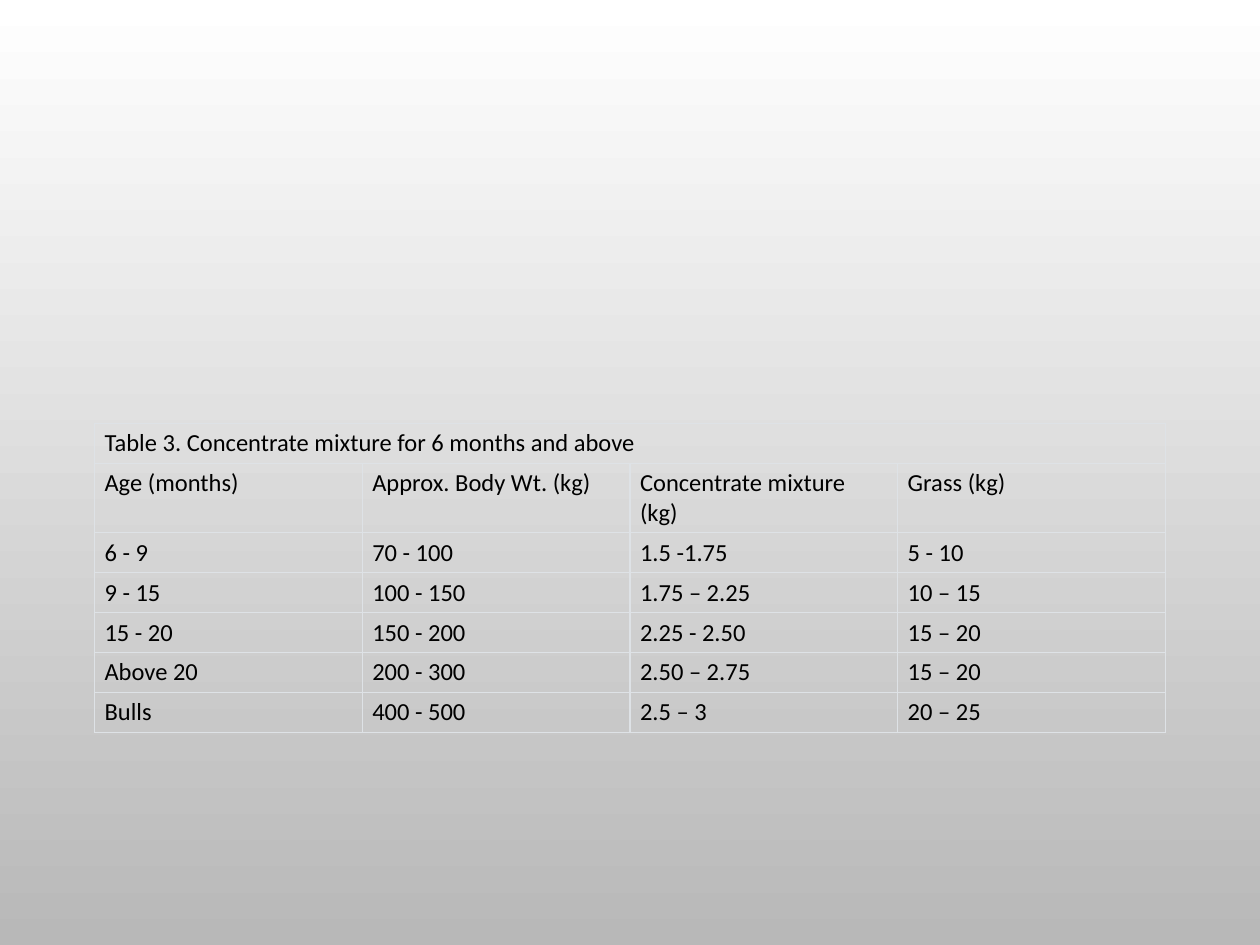
from lxml.etree import SubElement
from pptx import Presentation
from pptx.dml.color import RGBColor
from pptx.oxml.ns import qn
from pptx.util import Inches, Pt

HUES = {"top": "FFFFFF", "base": "B8B8B8", "text": "000000", "line": "DEE2E6"}
ROWS = [
    ["Table 3. Concentrate mixture for 6 months and above", "", "", ""],
    ["Age (months)", "Approx. Body Wt. (kg)", "Concentrate mixture (kg)", "Grass (kg)"],
    ["6 - 9", "70 - 100", "1.5 -1.75", "5 - 10"],
    ["9 - 15", "100 - 150", "1.75 – 2.25", "10 – 15"],
    ["15 - 20", "150 - 200", "2.25 - 2.50", "15 – 20"],
    ["Above 20", "200 - 300", "2.50 – 2.75", "15 – 20"],
    ["Bulls", "400 - 500", "2.5 – 3", "20 – 25"],
]


def add_lines(cell):
    props = cell._tc.get_or_add_tcPr()
    for spot, side in enumerate(("lnL", "lnR", "lnT", "lnB")):
        line = SubElement(props, qn(f"a:{side}"), w=str(Pt(0.75)))
        fill = SubElement(line, qn("a:solidFill"))
        SubElement(fill, qn("a:srgbClr"), val=HUES["line"])
        props.insert(spot, line)


deck = Presentation()
deck.slide_width = Inches(10)
deck.slide_height = Inches(7.5)
slide = deck.slides.add_slide(deck.slide_layouts[6])

back = slide.background.fill
back.gradient()
back.gradient_angle = 270
for stop, name, place in zip(back.gradient_stops, ("top", "base"), (0, 1)):
    stop.color.rgb = RGBColor.from_string(HUES[name])
    stop.position = place

table = slide.shapes.add_table(
    len(ROWS), len(ROWS[0]), Inches(0.75), Inches(3.36), Inches(8.5), Inches(2.21)
).table
table.first_row = False
table.horz_banding = False
table.cell(0, 0).merge(table.cell(0, 3))

for row, texts in enumerate(ROWS):
    for col, text in enumerate(texts):
        cell = table.cell(row, col)
        cell.fill.background()
        add_lines(cell)
        cell.margin_left = cell.margin_right = Inches(0.08)
        cell.margin_top = cell.margin_bottom = Inches(0.04)
        if cell.is_spanned:
            continue
        run = cell.text_frame.paragraphs[0].add_run()
        run.text = text
        run.font.name = "Calibri"
        run.font.size = Pt(14)
        run.font.color.rgb = RGBColor.from_string(HUES["text"])

deck.save("out.pptx")
